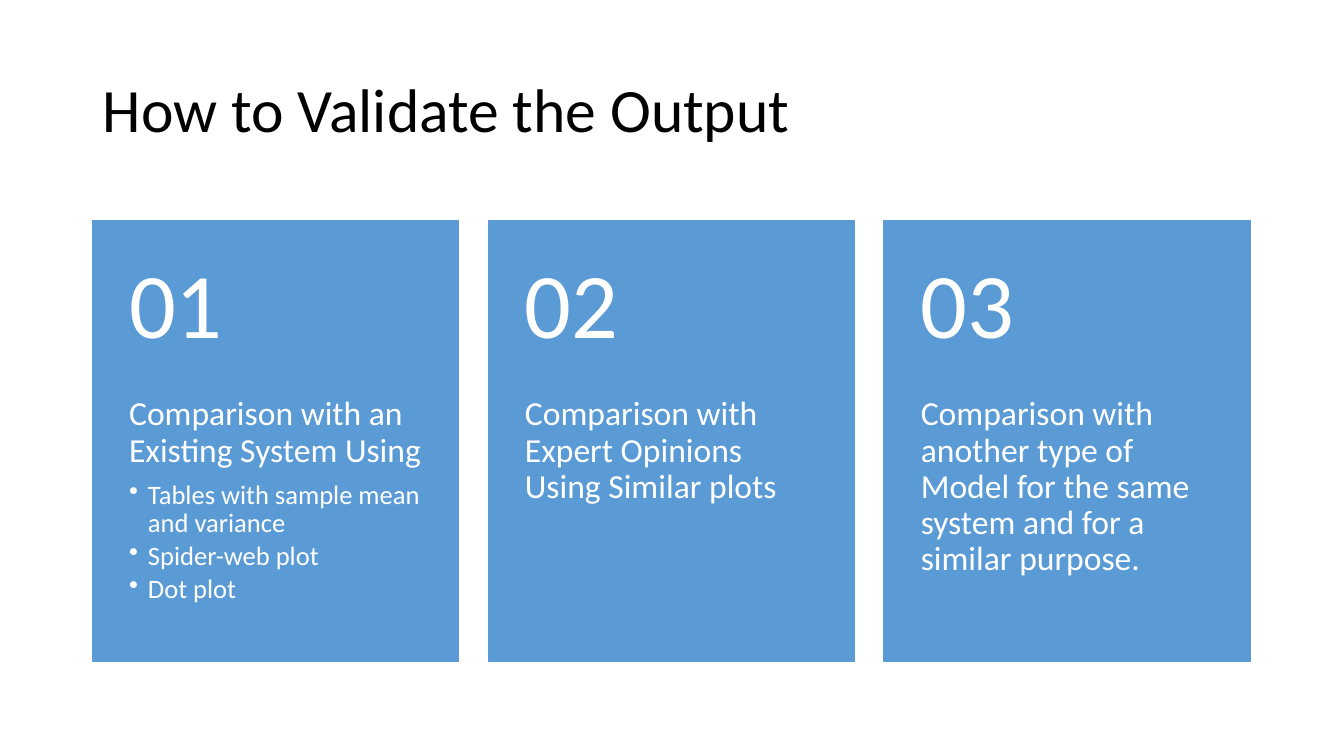
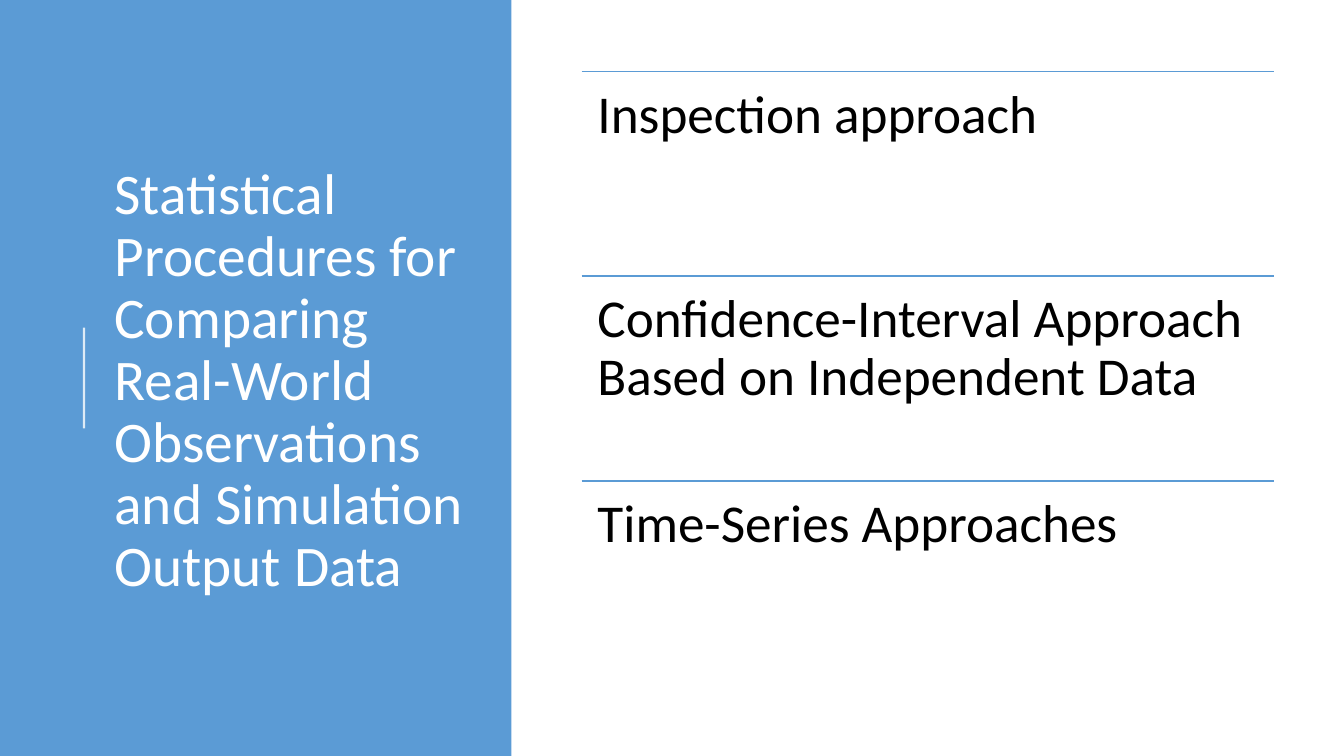
from dataclasses import dataclass

from lxml.etree import SubElement
from pptx import Presentation
from pptx.dml.color import RGBColor
from pptx.enum.shapes import MSO_CONNECTOR as Connector, MSO_SHAPE as Shape
from pptx.enum.text import MSO_ANCHOR as Anchor
from pptx.oxml.ns import qn
from pptx.util import Emu, Pt

# Content
CARDS_TITLE = "How to Validate the Output"
CARDS = [
    ("01", "Comparison with an Existing System Using",
     ["Tables with sample mean and variance", "Spider-web plot", "Dot plot"]),
    ("02", "Comparison with Expert Opinions Using Similar plots", []),
    ("03", "Comparison with another type of Model for the same system "
           "and for a similar purpose.", []),
]
PROCEDURES_TITLE = ("Statistical Procedures for Comparing Real-World "
                    "Observations and Simulation Output Data")
PROCEDURES = [
    "Inspection approach",
    "Confidence-Interval Approach Based on Independent Data",
    "Time-Series Approaches",
]


@dataclass(frozen=True)
class Theme:
    font: str = "Calibri"
    blue: RGBColor = RGBColor(0x5B, 0x9B, 0xD5)
    white: RGBColor = RGBColor(0xFF, 0xFF, 0xFF)
    black: RGBColor = RGBColor(0x00, 0x00, 0x00)
    title: int = 44
    side_title: int = 41
    number: int = 66
    heading: int = 24
    bullet: int = 19
    row: int = 38
    line_spacing: float = 0.9
    heading_gap: float = 0.35
    bullet_gap: float = 0.15


THEME = Theme()
PAGE_WIDTH, PAGE_HEIGHT = 1280, 720
TITLE_INSETS = (10, 5, 10, 5)


def px(length):
    return Emu(length * 9525)


# Shared parts
def add_panel(page, left, top, width, height, outlined=False):
    panel = page.shapes.add_shape(Shape.RECTANGLE, px(left), px(top), px(width), px(height))
    panel.shadow.inherit = False
    panel.fill.solid()
    panel.fill.fore_color.rgb = THEME.blue
    if outlined:
        panel.line.color.rgb = THEME.blue
        panel.line.width = Pt(1)
    else:
        panel.line.fill.background()


def add_line(page, start, end, color, weight, opacity=100):
    line = page.shapes.add_connector(Connector.STRAIGHT, *map(px, start + end))
    line.line.color.rgb = color
    line.line.width = Pt(weight)
    SubElement(line.element.spPr, qn("a:effectLst"))
    if opacity < 100:
        tint = line.element.spPr.find(".//" + qn("a:srgbClr"))
        SubElement(tint, qn("a:alpha"), val=str(opacity * 1000))


def add_box(page, left, top, width, height, insets, anchor=Anchor.TOP):
    frame = page.shapes.add_textbox(px(left), px(top), px(width), px(height)).text_frame
    frame.word_wrap = True
    frame.vertical_anchor = anchor
    frame.margin_left, frame.margin_top, frame.margin_right, frame.margin_bottom = map(px, insets)
    return frame


def write(para, text, size, color, gap=0, bulleted=False):
    para.text = text
    if bulleted:
        props = para._p.get_or_add_pPr()
        props.set("marL", str(px(18)))
        props.set("indent", str(px(-18)))
        SubElement(props, qn("a:buChar"), char="•")
    para.line_spacing = THEME.line_spacing
    para.space_after = Pt(round(size * gap, 2))
    para.font.name = THEME.font
    para.font.size = Pt(size)
    para.font.color.rgb = color


def add_title(page, text, area, size, color):
    frame = add_box(page, *area, TITLE_INSETS, Anchor.MIDDLE)
    write(frame.paragraphs[0], text, size, color)


# Slides
def build_cards(page):
    left, top, width, height, gap = 88, 210, 349, 420, 28
    number_height = 168
    add_title(page, CARDS_TITLE, (left, 38, 1104, 139), THEME.title, THEME.black)
    for index, (number, heading, bullets) in enumerate(CARDS):
        x = left + index * (width + gap)
        add_panel(page, x, top, width, height, outlined=True)
        body = add_box(page, x, top + number_height, width, height - number_height,
                       (35, 0, 35, 35))
        write(body.paragraphs[0], heading, THEME.heading, THEME.white, THEME.heading_gap)
        for bullet in bullets:
            write(body.add_paragraph(), bullet, THEME.bullet, THEME.white,
                  THEME.bullet_gap, bulleted=True)
        head = add_box(page, x, top, width, number_height, (35, 17, 35, 17), Anchor.MIDDLE)
        write(head.paragraphs[0], number, THEME.number, THEME.white, THEME.heading_gap)


def build_procedures(page):
    left, top, width, height = 554, 68, 659, 195
    add_panel(page, 0, 0, 487, PAGE_HEIGHT)
    add_line(page, (80, 408), (80, 312), THEME.white, 1.5, opacity=80)
    add_title(page, PROCEDURES_TITLE, (99, 75, 354, 578), THEME.side_title, THEME.white)
    for index, procedure in enumerate(PROCEDURES):
        y = top + index * height
        add_line(page, (left, y), (left + width, y), THEME.blue, 1)
        row = add_box(page, left, y, width, height, (15, 15, 15, 15))
        write(row.paragraphs[0], procedure, THEME.row, THEME.black, THEME.heading_gap)


def main():
    deck = Presentation()
    deck.slide_width, deck.slide_height = px(PAGE_WIDTH), px(PAGE_HEIGHT)
    for build in (build_cards, build_procedures):
        build(deck.slides.add_slide(deck.slide_layouts[6]))
    deck.save("out.pptx")


if __name__ == "__main__":
    main()
